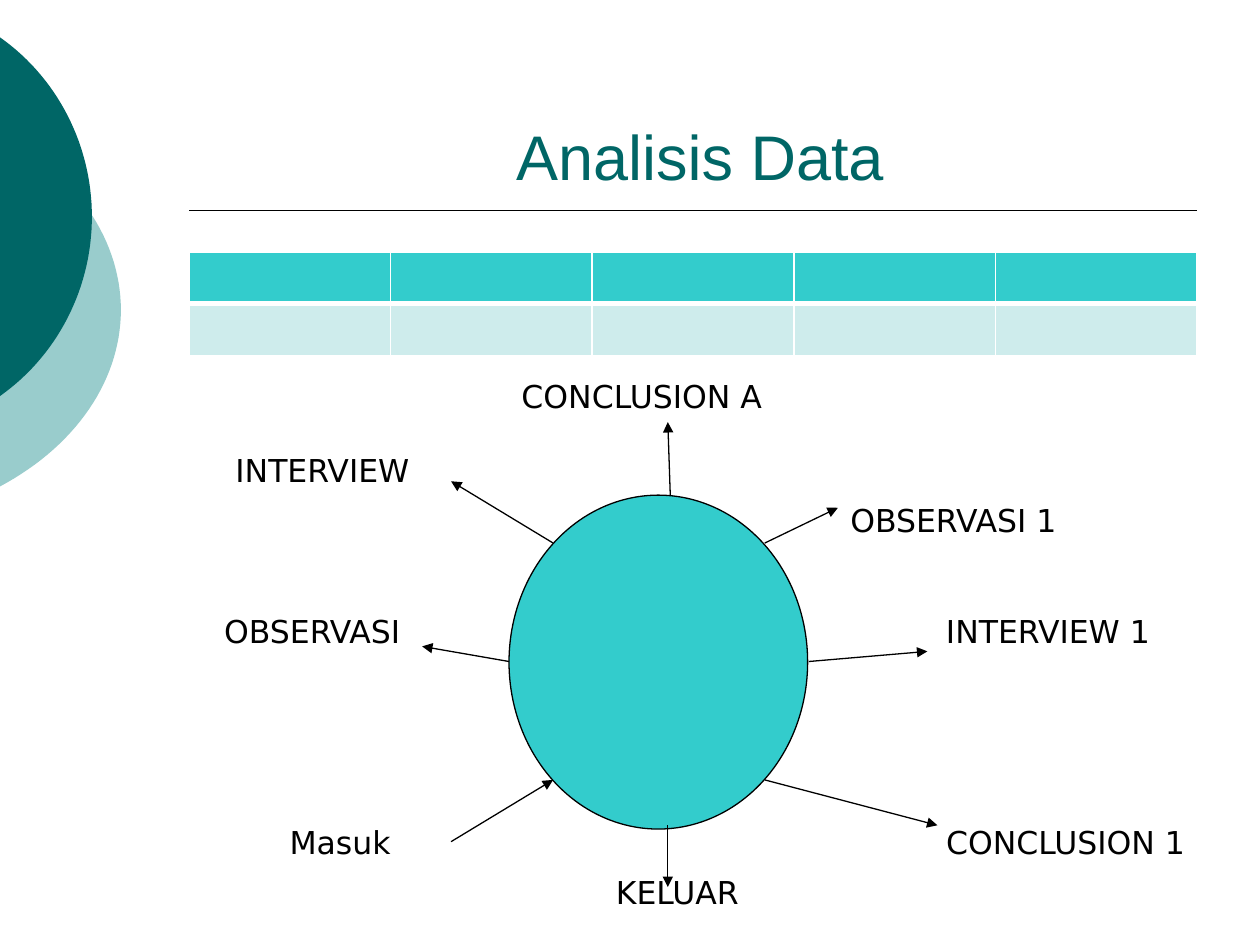
import math

from lxml import etree
from pptx import Presentation
from pptx.dml.color import RGBColor
from pptx.enum.shapes import MSO_CONNECTOR, MSO_SHAPE
from pptx.enum.text import MSO_ANCHOR, PP_ALIGN
from pptx.oxml.ns import qn
from pptx.util import Inches, Pt

STRAIGHT = MSO_CONNECTOR.STRAIGHT
OVAL = MSO_SHAPE.OVAL
TOP, BOTTOM = MSO_ANCHOR.TOP, MSO_ANCHOR.BOTTOM
LEFT, CENTER = PP_ALIGN.LEFT, PP_ALIGN.CENTER

COLORS = {
    "dark": "006666",
    "pale": "99CCCC",
    "accent": "33CCCC",
    "row": "CEECEC",
    "ink": "000000",
    "white": "FFFFFF",
}


def rgb(name):
    return RGBColor.from_string(COLORS[name])


class SlideBuilder:
    def __init__(self, slide):
        self.slide = slide
        self.font = "DejaVu Sans"
        self.size = 18

    def disc_edge(self, cx, cy, rx, ry, color):
        """Part of an ellipse that lies right of the slide's left edge."""
        end = math.acos(-cx / rx)
        steps = 60
        angles = [end * (2 * i / steps - 1) for i in range(steps + 1)]
        points = [(Inches(cx + rx * math.cos(a)), Inches(cy + ry * math.sin(a)))
                  for a in angles]
        builder = self.slide.shapes.build_freeform(*points[0])
        builder.add_line_segments(points[1:], close=True)
        s = builder.convert_to_shape()
        s.shadow.inherit = False
        s.fill.solid()
        s.fill.fore_color.rgb = rgb(color)
        s.line.fill.background()

    def oval(self, x, y, w, h, color):
        s = self.slide.shapes.add_shape(OVAL, Inches(x), Inches(y), Inches(w), Inches(h))
        s.shadow.inherit = False
        s.fill.solid()
        s.fill.fore_color.rgb = rgb(color)
        s.line.color.rgb = rgb("ink")
        s.line.width = Pt(0.75)

    def line(self, start, end, width=0.75, arrow=True):
        s = self.slide.shapes.add_connector(STRAIGHT, *map(Inches, start + end))
        s.line.color.rgb = rgb("ink")
        s.line.width = Pt(width)
        if arrow:
            ln = s.line._get_or_add_ln()
            etree.SubElement(ln, qn("a:tailEnd"), type="triangle")
        etree.SubElement(s._element.spPr, qn("a:effectLst"))

    def text(self, text, x, y, w, h=0.4, size=None, font=None, color="ink",
             align=LEFT, anchor=TOP):
        s = self.slide.shapes.add_textbox(Inches(x), Inches(y), Inches(w), Inches(h))
        tf = s.text_frame
        tf.word_wrap = True
        tf.vertical_anchor = anchor
        p = tf.paragraphs[0]
        p.text = text
        p.alignment = align
        p.font.size = Pt(size or self.size)
        p.font.name = font or self.font
        p.font.color.rgb = rgb(color)

    def border(self, cell, side, width):
        ln = etree.SubElement(cell._tc.get_or_add_tcPr(), qn(f"a:ln{side}"),
                              w=str(Pt(width)))
        fill = etree.SubElement(ln, qn("a:solidFill"))
        etree.SubElement(fill, qn("a:srgbClr"), val=COLORS["white"])

    def table(self, x, y, w, row_height, cols, row_colors):
        rows = len(row_colors)
        s = self.slide.shapes.add_table(rows, cols, Inches(x), Inches(y),
                                        Inches(w), Inches(row_height * rows))
        for i, color in enumerate(row_colors):
            for cell in s.table.rows[i].cells:
                # A thick rule separates the header from the body
                thick = {"B": 3} if i == 0 else {"T": 3}
                for side in "LRTB":
                    self.border(cell, side, thick.get(side, 1))
                cell.fill.solid()
                cell.fill.fore_color.rgb = rgb(color)


def main():
    prs = Presentation()
    prs.slide_width, prs.slide_height = Inches(10), Inches(7.5)
    b = SlideBuilder(prs.slides.add_slide(prs.slide_layouts[6]))

    # Decoration at the left edge and rule under the title
    b.disc_edge(-1.29, 2.46, 2.25, 1.71, "pale")
    b.disc_edge(-0.96, 1.72, 1.69, 1.73, "dark")
    b.line((1.5, 1.67), (9.5, 1.67), width=1, arrow=False)

    # Title
    b.text(" Analisis Data", 1.5, 0.33, 8, 1.25, size=36, font="Arial",
           color="dark", align=CENTER, anchor=BOTTOM)

    # Empty table
    b.table(1.5, 2, 8, 0.41, 5, ["accent", "row"])

    # Central oval with its arrows
    b.oval(4.04, 3.93, 2.37, 2.65, "accent")
    arrows = [
        ((4.04, 5.25), (3.35, 5.13)),
        ((4.39, 4.31), (3.58, 3.82)),
        ((5.32, 3.93), (5.3, 3.35)),
        ((6.07, 4.31), (6.65, 4.03)),
        ((6.42, 5.25), (7.36, 5.17)),
        ((6.07, 6.19), (7.44, 6.55)),
        ((3.58, 6.68), (4.39, 6.19)),
        ((5.3, 6.55), (5.3, 7.04)),
    ]
    for start, end in arrows:
        b.line(start, end)

    # Labels around the oval
    labels = [
        ("OBSERVASI", 1.68, 4.81, 1.69),
        ("INTERVIEW", 1.77, 3.53, 1.81),
        ("OBSERVASI 1", 6.65, 3.93, 1.97),
        ("CONCLUSION A", 4.04, 2.94, 2.52),
        ("INTERVIEW 1", 7.41, 4.81, 2.06),
        ("CONCLUSION 1", 7.41, 6.48, 2.32),
        ("Masuk", 2.2, 6.48, 1.7),
        ("KELUAR", 4.79, 6.88, 1.28),
    ]
    for label in labels:
        b.text(*label)

    prs.save("out.pptx")


if __name__ == "__main__":
    main()
